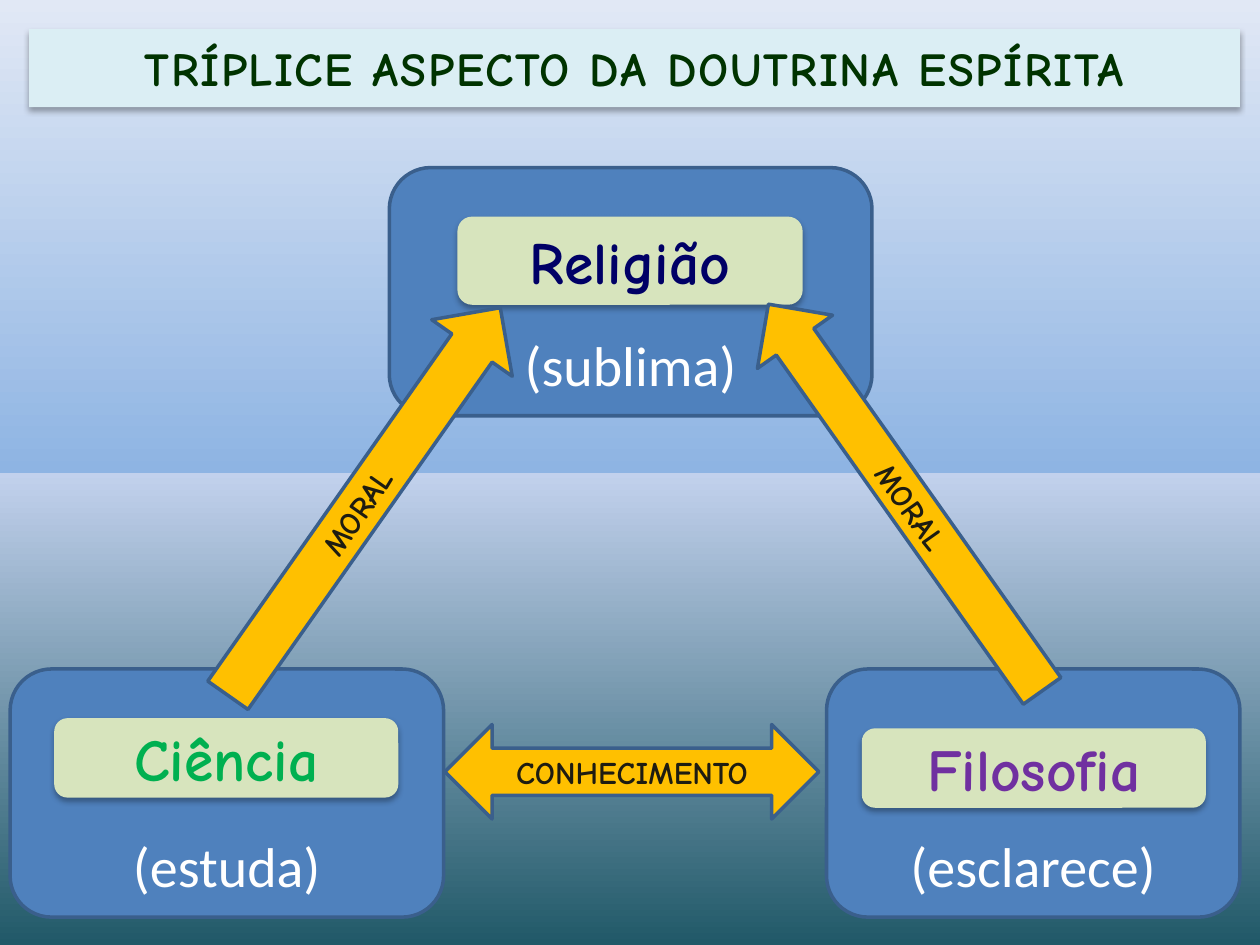
from dataclasses import dataclass

import lxml.etree
import pptx
import pptx.dml.color
import pptx.enum.shapes
import pptx.enum.text
import pptx.oxml
import pptx.oxml.ns
import pptx.util

Pt = pptx.util.Pt
qn = pptx.oxml.ns.qn
Shape = pptx.enum.shapes.MSO_SHAPE
Anchor = pptx.enum.text.MSO_ANCHOR

DISPLAY_FONT, BODY_FONT = "Comic Neue", "Calibri"
OUTLINE, CARD_BLUE, LABEL_GREEN, ARROW_GOLD = "3A5F8C", "4F81BD", "D7E4BD", "FFC000"
CARD_HEIGHT = 141.8
BACKGROUND_STOPS = [(0, "215968"), (50, "C2D1ED"), (50, "8EB4E3"), (100, "E1E8F5")]


@dataclass
class Frame:
    left: float
    top: float
    width: float
    height: float


@dataclass
class Card:
    name: str
    name_color: str
    role: str
    left: float
    top: float
    width: float
    label: Frame


@dataclass
class Arrow:
    text: str
    preset: Shape
    frame: Frame
    rotation: float = 0
    vertical: bool = False


CARDS = [
    Card("Ciência", "00B050", "(estuda)", 5.8, 382.3, 247.7, Frame(31, 410.4, 196.6, 45.4)),
    Card("Filosofia", "7030A0", "(esclarece)", 472.3, 382.3, 236.2, Frame(492.5, 416.2, 196.6, 45.4)),
    Card("Religião", "000066", "(sublima)", 222.5, 95.8, 275.8, Frame(261.4, 123.8, 197.3, 50.4)),
]
ARROWS = [
    Arrow("CONHECIMENTO", Shape.LEFT_RIGHT_ARROW, Frame(254.2, 414, 213.8, 54)),
    Arrow("MORAL", Shape.RIGHT_ARROW, Frame(72.7, 258.5, 270.7, 56.2), 305.1),
    Arrow("MORAL", Shape.UP_ARROW, Frame(491, 149, 52.6, 270.7), 324.7, True),
]


def rgb(value: str):
    return pptx.dml.color.RGBColor.from_string(value)


def write(box, text: str, *, size: float, color: str, font: str = DISPLAY_FONT,
          bold: bool = True, anchor=Anchor.MIDDLE, spacing: float = 0) -> None:
    frame = box.text_frame
    frame.word_wrap = True
    frame.auto_size = pptx.enum.text.MSO_AUTO_SIZE.NONE
    frame.vertical_anchor = anchor
    para = frame.paragraphs[0]
    para.alignment = pptx.enum.text.PP_ALIGN.CENTER
    span = para.add_run()
    span.text = text
    span.font.name = font
    span.font.size = Pt(size)
    span.font.bold = bold
    span.font.color.rgb = rgb(color)
    if spacing:
        span.font._element.set("spc", str(round(spacing * 100)))


def paint(box, fill: str, line: str = "") -> None:
    box.fill.solid()
    box.fill.fore_color.rgb = rgb(fill)
    if line:
        box.line.color.rgb = rgb(line)
        box.line.width = Pt(2)
    else:
        box.line.fill.background()


def add_soft_shadow(box) -> None:
    effects = box._element.spPr.find(qn("a:effectLst"))
    if effects is None:
        effects = lxml.etree.SubElement(box._element.spPr, qn("a:effectLst"))
    shadow = lxml.etree.SubElement(
        effects, qn("a:outerShdw"), blurRad=str(Pt(3.5)), dist=str(Pt(2.2)),
        dir="5400000", rotWithShape="0")
    color = lxml.etree.SubElement(shadow, qn("a:srgbClr"), val="000000")
    lxml.etree.SubElement(color, qn("a:alpha"), val="32000")


def place(box, frame: Frame) -> None:
    box.left, box.top = Pt(frame.left), Pt(frame.top)
    box.width, box.height = Pt(frame.width), Pt(frame.height)


def add_box(shapes, preset: Shape, frame: Frame, fill: str, line: str = ""):
    box = shapes.add_shape(preset, Pt(frame.left), Pt(frame.top),
                           Pt(frame.width), Pt(frame.height))
    box.shadow.inherit = False
    paint(box, fill, line)
    return box


def set_background(page) -> None:
    fill = page.background.fill
    fill.gradient()
    fill.gradient_angle = 90
    stops = page.background._cSld.find(".//" + qn("a:gsLst"))
    for stop in list(stops):
        stops.remove(stop)
    for position, color in BACKGROUND_STOPS:
        stop = lxml.etree.SubElement(stops, qn("a:gs"), pos=str(position * 1000))
        lxml.etree.SubElement(stop, qn("a:srgbClr"), val=color)


def format_title(page) -> None:
    title = page.shapes.title
    place(title, Frame(16.6, 16.6, 691.9, 44.6))
    outline = pptx.oxml.parse_xml(
        f'<a:prstGeom {pptx.oxml.ns.nsdecls("a")} prst="roundRect"><a:avLst/></a:prstGeom>')
    title._element.spPr.find(qn("a:xfrm")).addnext(outline)
    paint(title, "DBEEF4")
    add_soft_shadow(title)
    write(title, "TRÍPLICE ASPECTO DA DOUTRINA ESPÍRITA", size=27, color="003300", spacing=1)


def add_card(page, card: Card) -> None:
    group = page.shapes.add_group_shape()
    panel = add_box(group.shapes, Shape.ROUNDED_RECTANGLE,
                    Frame(card.left, card.top, card.width, CARD_HEIGHT), CARD_BLUE, OUTLINE)
    write(panel, card.role, size=32, color="FFFFFF", font=BODY_FONT, bold=False,
          anchor=Anchor.BOTTOM)
    label = add_box(group.shapes, Shape.ROUNDED_RECTANGLE, card.label, LABEL_GREEN)
    add_soft_shadow(label)
    write(label, card.name, size=34, color=card.name_color)


def add_arrow(page, arrow: Arrow) -> None:
    box = add_box(page.shapes, arrow.preset, arrow.frame, ARROW_GOLD, OUTLINE)
    box.rotation = arrow.rotation
    write(box, arrow.text, size=18, color="1E1C11")
    if arrow.vertical:
        box.text_frame._txBody.bodyPr.set("vert", "vert")


def main() -> None:
    deck = pptx.Presentation()
    deck.slide_width, deck.slide_height = Pt(720), Pt(540)
    page = deck.slides.add_slide(deck.slide_layouts.get_by_name("Title Only"))
    set_background(page)
    format_title(page)
    # Three aspects
    for card in CARDS:
        add_card(page, card)
    # Links between the aspects
    for arrow in ARROWS:
        add_arrow(page, arrow)
    deck.save("out.pptx")


if __name__ == "__main__":
    main()
